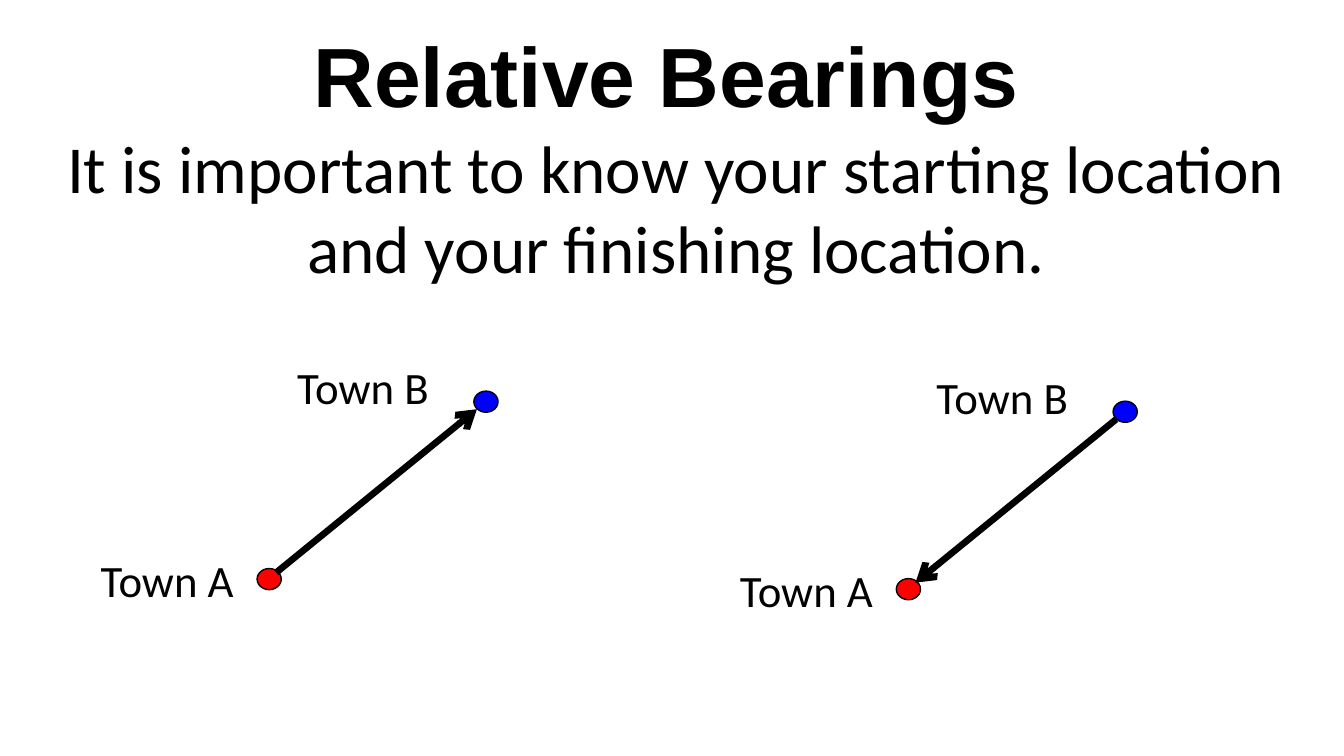
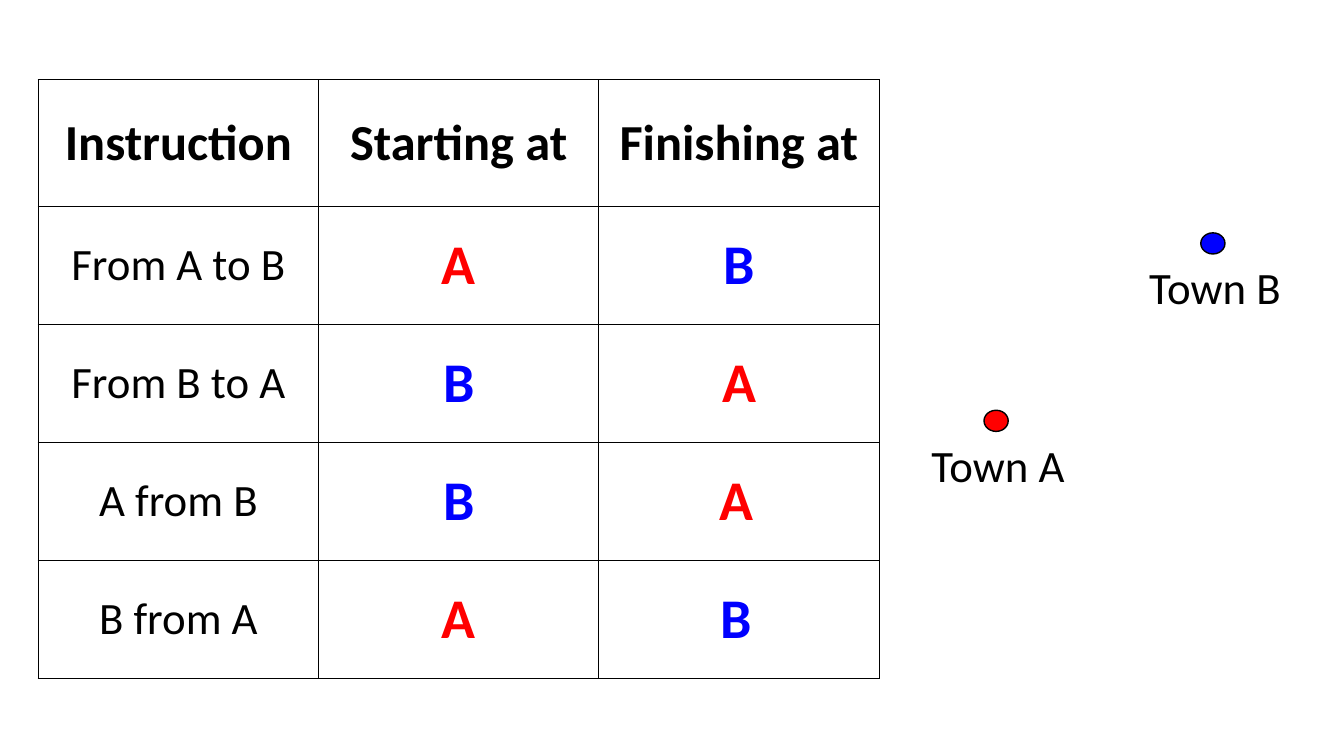
"""Builds two slides on relative bearings between two towns."""
from lxml import etree
from pptx import Presentation, util as u
from pptx.dml.color import RGBColor
from pptx.enum import shapes, text
from pptx.oxml.ns import qn

COLORS = {"ink": "000000", "A": "FF0000", "B": "0000FF"}
NO_GRID_STYLE = "{2D5ABB26-0587-4C30-8999-92F81FD0307C}"
TITLE = "Relative Bearings"
MESSAGE = "It is important to know your starting location and your finishing location."
HEADERS = ["Instruction", "Starting at", "Finishing at"]
JOURNEYS = [
    ("From A to B", "AB"),
    ("From B to A", "BA"),
    ("A from B", "BA"),
    ("B from A", "AB"),
]

TOWNS = {"A": (0, 0), "B": (2.15, -1.76)}
ROUTE_ENDS = {"A": (0.19, 0.04), "B": (2.18, -1.58)}
BESIDE = {"A": (-1.65, -0.21), "B": (-1.85, -0.36)}
BELOW = {"A": (-0.62, 0.22), "B": (-0.61, 0.22)}
ROUTE_MAPS = [((2.55, 5.64), "AB"), ((8.89, 5.74), "BA")]
PLAIN_MAP = (9.76, 4.07)

TABLE_LEFT, TABLE_TOP = 0.38, 0.79
COL_W, HEAD_H, ROW_H = 2.78, 1.26, 1.17
LAST_COL_W = [COL_W, COL_W, 2.72, 2.72]


def rgb(name):
    return RGBColor.from_string(COLORS[name])


def inches(*lengths):
    return [u.Inches(n) for n in lengths]


def write(tf, words, size=32, font="Calibri", color="ink", bold=False, center=True):
    p = tf.paragraphs[0]
    p.alignment = text.PP_ALIGN.CENTER if center else text.PP_ALIGN.LEFT
    r = p.add_run()
    r.text = words
    r.font.size, r.font.name, r.font.bold = u.Pt(size), font, bold
    r.font.color.rgb = rgb(color)


def add_text(s, box, words, **style):
    tf = s.shapes.add_textbox(*inches(*box)).text_frame
    tf.word_wrap = True
    write(tf, words, **style)


def add_route(s, start, end):
    line = s.shapes.add_connector(shapes.MSO_CONNECTOR.STRAIGHT, *inches(*start, *end))
    line.line.color.rgb = rgb("ink")
    line.line.width = u.Pt(4.75)
    etree.SubElement(line.line._get_or_add_ln(), qn("a:tailEnd"), type="arrow")
    etree.SubElement(line._element.spPr, qn("a:effectLst"))


def add_map(s, origin, labels, route=""):
    def place(offset):
        return origin[0] + offset[0], origin[1] + offset[1]

    for town, offset in TOWNS.items():
        x, y = place(offset)
        dot = s.shapes.add_shape(shapes.MSO_SHAPE.OVAL, *inches(x, y, 0.24, 0.21))
        dot.shadow.inherit = False
        dot.fill.solid()
        dot.fill.fore_color.rgb = rgb(town)
        dot.line.color.rgb = rgb("ink")
        dot.line.width = u.Pt(1)
        dx, dy = labels[town]
        add_text(s, (x + dx, y + dy, 1.6, 0.64), f"Town {town}", center=False)
    if route:
        add_route(s, *(place(ROUTE_ENDS[town]) for town in route))


def add_borders(cell):
    tc_pr = cell._tc.get_or_add_tcPr()
    for i, side in enumerate(("lnL", "lnR", "lnT", "lnB")):
        ln = etree.Element(qn(f"a:{side}"), w=str(u.Pt(1)))
        fill = etree.SubElement(ln, qn("a:solidFill"))
        etree.SubElement(fill, qn("a:srgbClr"), val=COLORS["ink"])
        tc_pr.insert(i, ln)


def add_table(s, left, top, widths, heights, rows, borders=False):
    box = inches(left, top, sum(widths), sum(heights))
    table = s.shapes.add_table(len(heights), len(widths), *box).table
    table._tbl.tblPr[0].text = NO_GRID_STYLE
    table.first_row = table.horz_banding = False
    for col, width in zip(table.columns, widths):
        col.width = u.Inches(width)
    for row, height, items in zip(table.rows, heights, rows):
        row.height = u.Inches(height)
        for cell, (words, style) in zip(row.cells, items):
            cell.fill.background()
            cell.vertical_anchor = text.MSO_ANCHOR.MIDDLE
            if words:
                write(cell.text_frame, words, **style)
            if borders:
                add_borders(cell)


def build_intro(prs):
    s = prs.slides.add_slide(prs.slide_layouts[5])
    title = s.shapes.title
    title.left, title.top, title.width, title.height = inches(2.7, 0.18, 7.81, 1.11)
    title.text_frame.vertical_anchor = text.MSO_ANCHOR.TOP
    write(title.text_frame, TITLE, size=60, font="Arial", bold=True)
    add_text(s, (0.31, 1.2, 12.79, 1.72), MESSAGE, size=48)
    for origin, route in ROUTE_MAPS:
        add_map(s, origin, BESIDE, route)


def build_journeys(prs):
    s = prs.slides.add_slide(prs.slide_layouts[6])
    rows = [[(words, {"size": 36, "bold": True}) for words in HEADERS]]
    rows += [[(words, {}), ("", {}), ("", {})] for words, _ in JOURNEYS]
    heights = [HEAD_H] + [ROW_H] * len(JOURNEYS)
    add_table(s, TABLE_LEFT, TABLE_TOP, [COL_W] * 3, heights, rows, borders=True)
    for i, ((_, towns), last_w) in enumerate(zip(JOURNEYS, LAST_COL_W)):
        answers = [(town, {"size": 40, "bold": True, "color": town}) for town in towns]
        top = TABLE_TOP + HEAD_H + i * ROW_H
        add_table(s, TABLE_LEFT + COL_W, top, [COL_W, last_w], [ROW_H], [answers])
    add_map(s, PLAIN_MAP, BELOW)


def main():
    prs = Presentation()
    prs.slide_width, prs.slide_height = inches(13.33, 7.5)
    build_intro(prs)
    build_journeys(prs)
    prs.save("out.pptx")


if __name__ == "__main__":
    main()
